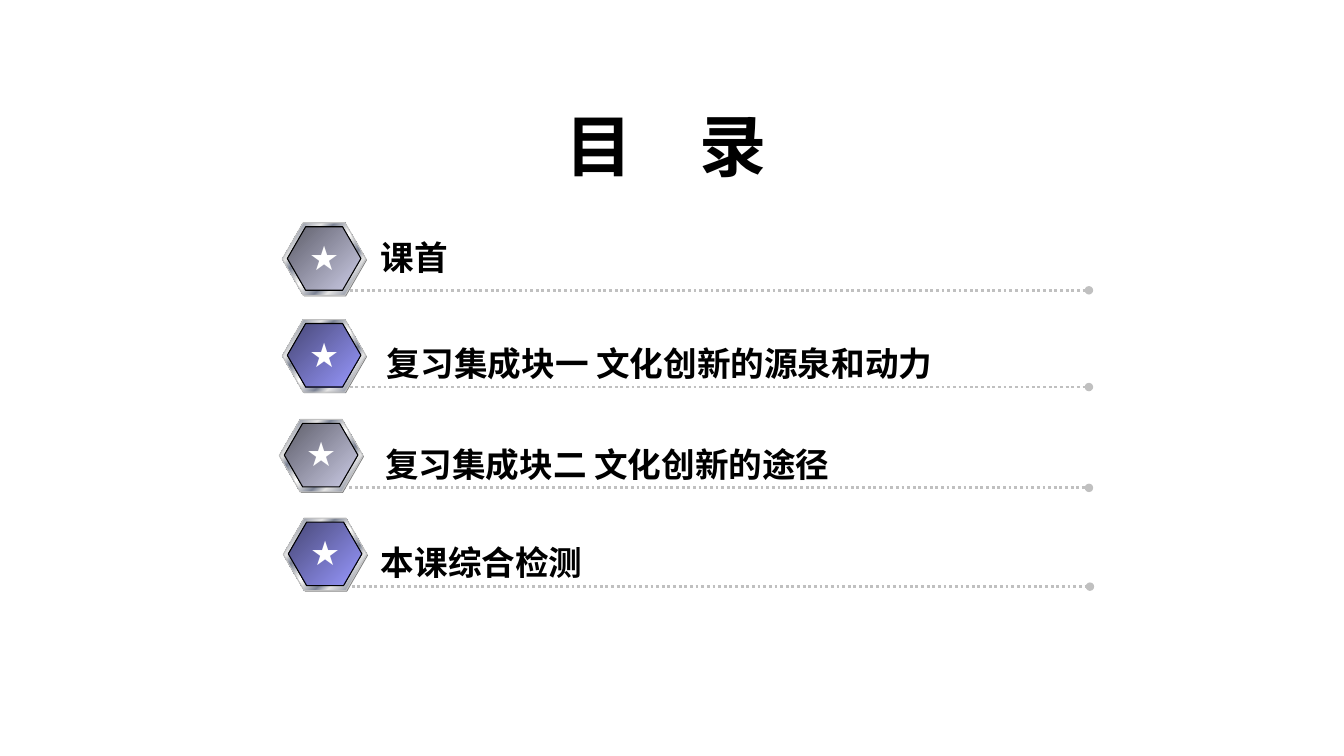
from lxml import etree
from pptx import Presentation
from pptx import util as u
from pptx.dml.color import RGBColor
from pptx.enum import dml, shapes, text
from pptx.oxml.ns import qn

COLORS = {
    "ink": "000000", "white": "FFFFFF", "line": "C0C0C0", "shade": "808080",
    "silver": "E6E6E6", "steel": "7D8496",
    "gray_dark": "5E5E6A", "gray_light": "CCCCE6",
    "blue_dark": "474776", "blue_light": "9999FF",
}
RIM = [(0, "silver"), (8, "steel"), (26, "silver"), (34, "steel"), (46, "silver"),
       (50, "white"), (54, "silver"), (66, "steel"), (74, "silver"), (92, "steel"),
       (100, "silver")]
GRAY = [(0, "gray_dark"), (100, "gray_light")]
BLUE = [(0, "blue_dark"), (100, "blue_light")]
CJK, LATIN = "Noto Sans CJK JP", "Arial"


def rgb(name):
    return RGBColor.from_string(COLORS[name])


def apply(target, values):
    for name, value in values.items():
        setattr(target, name, value)


class Deck:
    def __init__(self, prs):
        self.s = prs.slides.add_slide(prs.slide_layouts[6])

    def label(self, words, x, y, w, h, size=24, font=CJK, color="ink", align="LEFT",
              **frame):
        sp = self.s.shapes.add_textbox(*map(u.Inches, (x, y, w, h)))
        tf = sp.text_frame
        apply(tf, {"word_wrap": True, "auto_size": text.MSO_AUTO_SIZE.SHAPE_TO_FIT_TEXT,
                   **frame})
        p = tf.paragraphs[0]
        p.alignment = getattr(text.PP_ALIGN, align)
        r = p.add_run()
        r.text = words
        apply(r.font, {"size": u.Pt(size), "bold": True, "name": font})
        r.font.color.rgb = rgb(color)
        if font == CJK:
            etree.SubElement(r.font._element, qn("a:ea"), typeface=font)

    def gradient(self, sp, stops):
        sp.fill.gradient()
        sp.fill.gradient_angle = 315
        stop_list = sp._element.spPr.find(".//" + qn("a:gsLst"))
        for old in list(stop_list):
            stop_list.remove(old)
        for pos, name in stops:
            gs = etree.SubElement(stop_list, qn("a:gs"), pos=str(pos * 1000))
            etree.SubElement(gs, qn("a:srgbClr"), val=COLORS[name])

    def hexagon(self, group, x, y, w, h, stops=None, line=None):
        sp = group.shapes.add_shape(shapes.MSO_SHAPE.HEXAGON,
                                    *map(u.Inches, (x, y, w, h)))
        sp.shadow.inherit = False
        sp.adjustments[0], sp.adjustments[1] = 0.289, 1.155
        if stops:
            self.gradient(sp, stops)
        else:
            sp.fill.solid()
            sp.fill.fore_color.rgb = rgb("shade")
        if line:
            sp.line.color.rgb = rgb(line)
            sp.line.width = u.Pt(0.75)
        else:
            sp.line.fill.background()

    def badge(self, x, y, core):
        group = self.s.shapes.add_group_shape()
        self.hexagon(group, x, y, 0.83, 0.72)
        self.hexagon(group, x - 0.01, y - 0.01, 0.83, 0.72, RIM, "line")
        self.hexagon(group, x + 0.04, y + 0.03, 0.73, 0.63, core, "ink")
        self.label("★", x + 0.14, y + 0.08, 0.53, 0.5, font=LATIN, color="white",
                   align="CENTER", word_wrap=False)

    def dotted_line(self, x1, x2, y):
        c = self.s.shapes.add_connector(shapes.MSO_CONNECTOR.STRAIGHT,
                                        *map(u.Inches, (x1, y, x2, y)))
        c.line.color.rgb = rgb("line")
        apply(c.line, {"width": u.Pt(2), "dash_style": dml.MSO_LINE.ROUND_DOT})
        etree.SubElement(c.line._get_or_add_ln(), qn("a:tailEnd"), type="oval")
        etree.SubElement(c._element.spPr, qn("a:effectLst"))


def main():
    prs = Presentation()
    apply(prs, {"slide_width": u.Inches(13.33), "slide_height": u.Inches(7.5)})
    deck = Deck(prs)
    deck.label("目　录", 2.02, 0.91, 9.17, 1.05, size=48, align="CENTER",
               auto_size=text.MSO_AUTO_SIZE.NONE,
               vertical_anchor=text.MSO_ANCHOR.MIDDLE)
    entries = [
        ("课首", 3.68, 2.3, 5.67, 2.81, 2.22, GRAY, 3.47, 10.8, 2.88),
        ("复习集成块一 文化创新的源泉和动力", 3.74, 3.35, 6.14, 2.81, 3.18, BLUE, 3.47, 10.8, 3.84),
        ("复习集成块二 文化创新的途径", 3.72, 4.35, 5.75, 2.78, 4.17, GRAY, 3.24, 10.8, 4.84),
        ("本课综合检测", 3.68, 5.33, 5.31, 2.82, 5.15, BLUE, 3.21, 10.81, 5.82),
    ]
    for words, x, y, w, badge_x, badge_y, core, start, end, line_y in entries:
        deck.dotted_line(start, end, line_y)
        deck.badge(badge_x, badge_y, core)
        deck.label(words, x, y, w, 0.5)
    prs.save("out.pptx")


if __name__ == "__main__":
    main()
